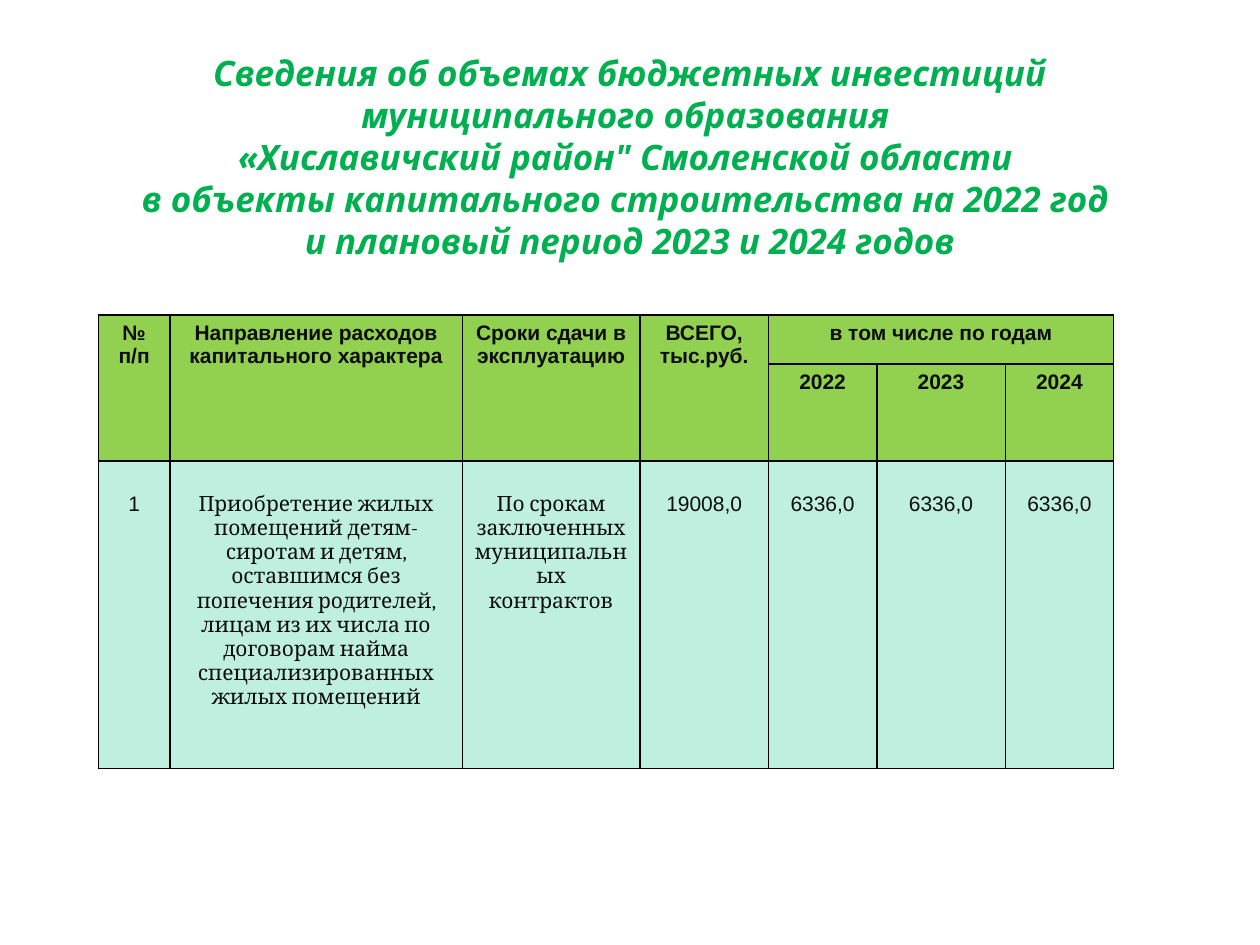
from lxml import etree
from pptx import Presentation
from pptx.dml.color import RGBColor
from pptx.enum import text
from pptx.oxml import ns
from pptx.util import Inches, Pt

# Content
TITLE = [
    "Сведения об объемах бюджетных инвестиций муниципального образования ",
    "«Хиславичский район\" Смоленской области ",
    "в объекты капитального строительства на 2022 год ",
    "и плановый период 2023 и 2024 годов",
]
HEAD = [
    ["№\nп/п", "Направление расходов капитального характера",
     "Сроки сдачи в эксплуатацию", "ВСЕГО, тыс.руб.",
     "в том числе по годам", "", ""],
    ["", "", "", "", "2022", "2023", "2024"],
]
BODY = [
    ["1",
     "Приобретение жилых помещений детям-сиротам и детям, оставшимся без "
     "попечения родителей, лицам из их числа по договорам найма "
     "специализированных жилых помещений",
     "По срокам заключенных муниципальных контрактов",
     "19008,0", "6336,0", "6336,0", "6336,0"],
]
COLS = [0.57, 2.32, 1.41, 1.02, 0.86, 1.02, 0.86]
ROWS = [0.39, 0.77, 2.44]
SPANS = [((0, c), (1, c)) for c in range(4)] + [((0, 4), (0, 6))]
PROSE = (1, 2)  # body columns set in the serif face

THEME = {
    "title": {"font": "Noto Sans", "size": 20, "color": "00B050", "bold": True},
    "head": {"font": "Arial", "size": 12, "color": "0D0D0D", "bold": True},
    "num": {"font": "Arial", "size": 12, "color": "0D0D0D", "bold": False},
    "prose": {"font": "Cambria", "size": 12, "color": "0D0D0D", "bold": False},
    "head_fill": "92D050",
    "body_fill": "BFEFDF",
    "line": "000000",
}


def add_run(par, words, look):
    run = par.add_run()
    run.text = words
    font = run.font
    font.name, font.size, font.bold = look["font"], Pt(look["size"]), look["bold"]
    font.color.rgb = RGBColor.from_string(look["color"])
    return run


def add_lines(cell):
    props = cell._tc.get_or_add_tcPr()
    for side in ("lnL", "lnR", "lnT", "lnB"):
        line = etree.SubElement(props, ns.qn(f"a:{side}"), w=str(Pt(1)))
        fill = etree.SubElement(line, ns.qn("a:solidFill"))
        etree.SubElement(fill, ns.qn("a:srgbClr"), val=THEME["line"])


def fill_cell(cell, words, look, fill, top):
    add_lines(cell)
    cell.fill.solid()
    cell.fill.fore_color.rgb = RGBColor.from_string(fill)
    cell.margin_top = Inches(top)
    frame = cell.text_frame
    for i, part in enumerate(words.split("\n")):
        par = frame.add_paragraph() if i else frame.paragraphs[0]
        par.alignment = text.PP_ALIGN.CENTER
        if look == "prose":
            par.line_spacing = Pt(13.8)
        if part:
            add_run(par, part, THEME[look])


def add_title(slide):
    title = slide.shapes.title
    title.left, title.top = Inches(0.5), Inches(0.3)
    title.width, title.height = Inches(9), Inches(2.12)
    frame = title.text_frame
    frame.word_wrap = True
    frame.auto_size = text.MSO_AUTO_SIZE.NONE
    frame.vertical_anchor = text.MSO_ANCHOR.MIDDLE
    frame.margin_bottom = Inches(0.29)
    par = frame.paragraphs[0]
    par.alignment = text.PP_ALIGN.CENTER
    par.line_spacing = Pt(24)
    for i, line in enumerate(TITLE):
        if i:
            par.add_line_break()
        add_run(par, line, THEME["title"]).font.italic = True


def add_grid(slide):
    table = slide.shapes.add_table(
        len(ROWS), len(COLS), Inches(0.78), Inches(2.5),
        Inches(sum(COLS)), Inches(sum(ROWS))).table
    table.first_row = table.horz_banding = False
    for col, width in zip(table.columns, COLS):
        col.width = Inches(width)
    for row, height in zip(table.rows, ROWS):
        row.height = Inches(height)
    for r, row in enumerate(HEAD + BODY):
        for c, words in enumerate(row):
            if r < len(HEAD):
                style = ("head", THEME["head_fill"], 0.05)
            else:
                look = "prose" if c in PROSE else "num"
                style = (look, THEME["body_fill"], 0.25)
            fill_cell(table.cell(r, c), words, *style)
    for first, last in SPANS:
        table.cell(*first).merge(table.cell(*last))


def main():
    deck = Presentation()
    deck.slide_width, deck.slide_height = Inches(10), Inches(7.5)
    slide = deck.slides.add_slide(deck.slide_layouts[5])
    add_title(slide)
    add_grid(slide)
    deck.save("out.pptx")


if __name__ == "__main__":
    main()
